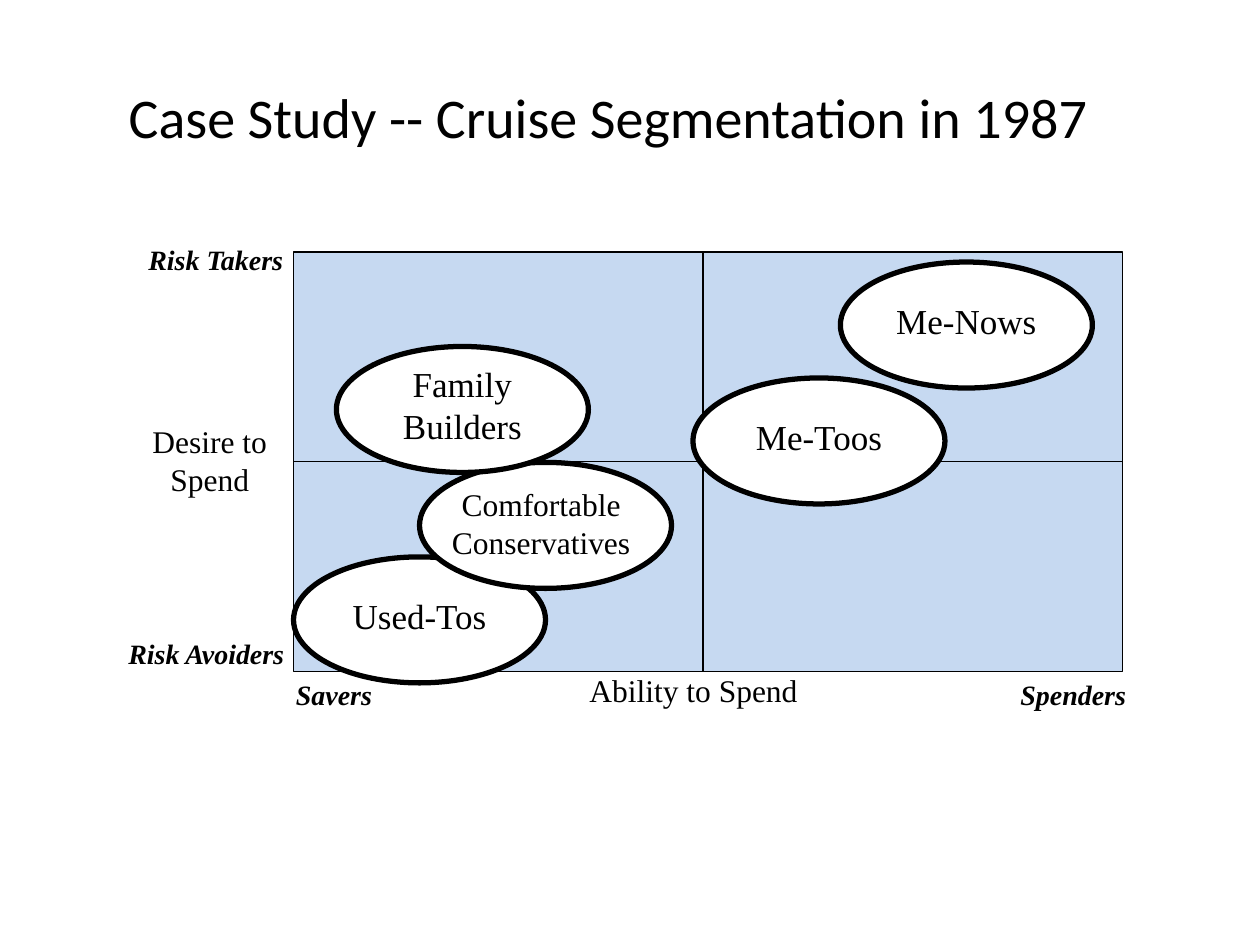
from dataclasses import dataclass

from lxml import etree
from pptx import Presentation
from pptx.dml.color import RGBColor
from pptx.enum import shapes, text
from pptx.oxml import ns
from pptx.util import Inches, Pt


@dataclass(frozen=True)
class Theme:
    ink: RGBColor = RGBColor(0, 0, 0)
    paper: RGBColor = RGBColor(255, 255, 255)
    grid: RGBColor = RGBColor(0xC6, 0xD9, 0xF1)
    title_font: str = "Calibri"
    label_font: str = "Times New Roman"
    title_size: int = 32
    segment_size: int = 20
    axis_size: int = 18
    end_size: int = 16
    thin: float = 0.75
    thick: float = 3


THEME = Theme()
CENTER, LEFT = text.PP_ALIGN.CENTER, text.PP_ALIGN.LEFT
OVAL_SIZE = (2, 1)

# Matrix edges and dividers
MATRIX_LEFT, MATRIX_TOP, MATRIX_WIDTH, MATRIX_HEIGHT = 2.33, 2, 6.58, 3.33
DIVIDER_X = 5.58
DIVIDER_Y = MATRIX_TOP + MATRIX_HEIGHT / 2

# Segments from back to front: oval position, label, label box, type size
SEGMENTS = [
    ((6.67, 2.08), "Me-Nows", (6.92, 2.33, 1.5, 0.43), THEME.segment_size),
    ((5.5, 3), "Me-Toos", (5.75, 3.25, 1.5, 0.43), THEME.segment_size),
    ((2.33, 4.42), "Used-Tos", (2.58, 4.67, 1.5, 0.43), THEME.segment_size),
    ((3.33, 3.67), "Comfortable Conservatives", (3.42, 3.8, 1.75, 0.7),
     THEME.axis_size),
    ((2.67, 2.75), "Family Builders", (2.92, 2.83, 1.5, 0.77),
     THEME.segment_size),
]

AXIS_TITLES = [
    ("Desire to Spend", (0.83, 3.3, 1.67, 0.7), CENTER),
    ("Ability to Spend", (4.58, 5.28, 2.5, 0.33), LEFT),
]

AXIS_ENDS = [
    ("Risk Takers", (1.08, 1.88, 1.33, 0.37)),
    ("Risk Avoiders", (0.92, 5, 1.58, 0.37)),
    ("Savers", (2.25, 5.33, 1.58, 0.37)),
    ("Spenders", (8, 5.33, 1.58, 0.37)),
]


def inches(values):
    return [Inches(value) for value in values]


def write(paragraph, words, font_name, size, align, emphasis=None):
    paragraph.alignment = align
    run = paragraph.add_run()
    run.text = words
    font = run.font
    font.name, font.size = font_name, Pt(size)
    font.bold = font.italic = emphasis
    font.color.rgb = THEME.ink


def add_title(slide, words):
    title = slide.shapes.title
    title.left, title.top, title.width, title.height = inches(
        (0.08, 0.3, 9.5, 1.25))
    title.text_frame.vertical_anchor = text.MSO_ANCHOR.MIDDLE
    write(title.text_frame.paragraphs[0], words, THEME.title_font,
          THEME.title_size, CENTER)


def add_filled(slide, kind, box, fill, line_width):
    shape = slide.shapes.add_shape(kind, *inches(box))
    shape.shadow.inherit = False
    shape.fill.solid()
    shape.fill.fore_color.rgb = fill
    shape.line.color.rgb = THEME.ink
    shape.line.width = Pt(line_width)


def add_divider(slide, start, end):
    line = slide.shapes.add_connector(
        shapes.MSO_CONNECTOR.STRAIGHT, *inches(start + end))
    line.line.color.rgb = THEME.ink
    line.line.width = Pt(THEME.thin)
    etree.SubElement(line._element.spPr, ns.qn("a:effectLst"))


def add_label(slide, words, box, size, align=CENTER, emphasis=None):
    frame = slide.shapes.add_textbox(*inches(box)).text_frame
    frame.word_wrap = True
    write(frame.paragraphs[0], words, THEME.label_font, size, align, emphasis)


def add_matrix(slide):
    box = (MATRIX_LEFT, MATRIX_TOP, MATRIX_WIDTH, MATRIX_HEIGHT)
    add_filled(slide, shapes.MSO_SHAPE.RECTANGLE, box, THEME.grid, THEME.thin)
    add_divider(slide, (DIVIDER_X, MATRIX_TOP),
                (DIVIDER_X, MATRIX_TOP + MATRIX_HEIGHT))
    add_divider(slide, (MATRIX_LEFT, DIVIDER_Y),
                (MATRIX_LEFT + MATRIX_WIDTH, DIVIDER_Y))


def main():
    presentation = Presentation()
    presentation.slide_width, presentation.slide_height = inches((10, 7.5))
    slide = presentation.slides.add_slide(presentation.slide_layouts[5])

    # Title and matrix
    add_title(slide, "Case Study -- Cruise Segmentation in 1987")
    add_matrix(slide)

    # Ovals first, so that no label is covered
    for position, *_ in SEGMENTS:
        add_filled(slide, shapes.MSO_SHAPE.OVAL, position + OVAL_SIZE,
                   THEME.paper, THEME.thick)
    for _, words, box, size in SEGMENTS:
        add_label(slide, words, box, size)

    # Axis titles and the names of the axis ends
    for words, box, align in AXIS_TITLES:
        add_label(slide, words, box, THEME.axis_size, align)
    for words, box in AXIS_ENDS:
        add_label(slide, words, box, THEME.end_size, LEFT, emphasis=True)

    presentation.save("out.pptx")


if __name__ == "__main__":
    main()
